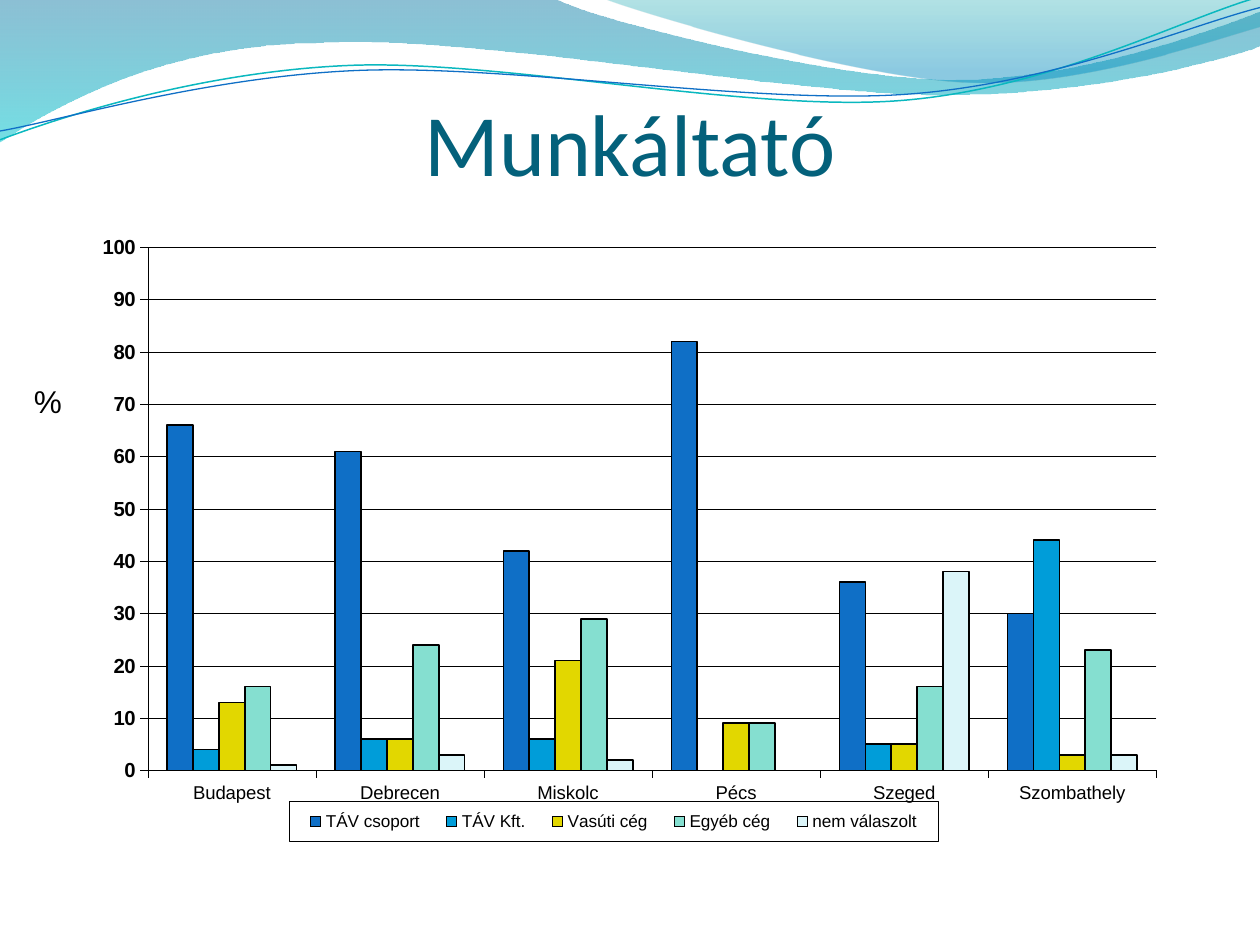
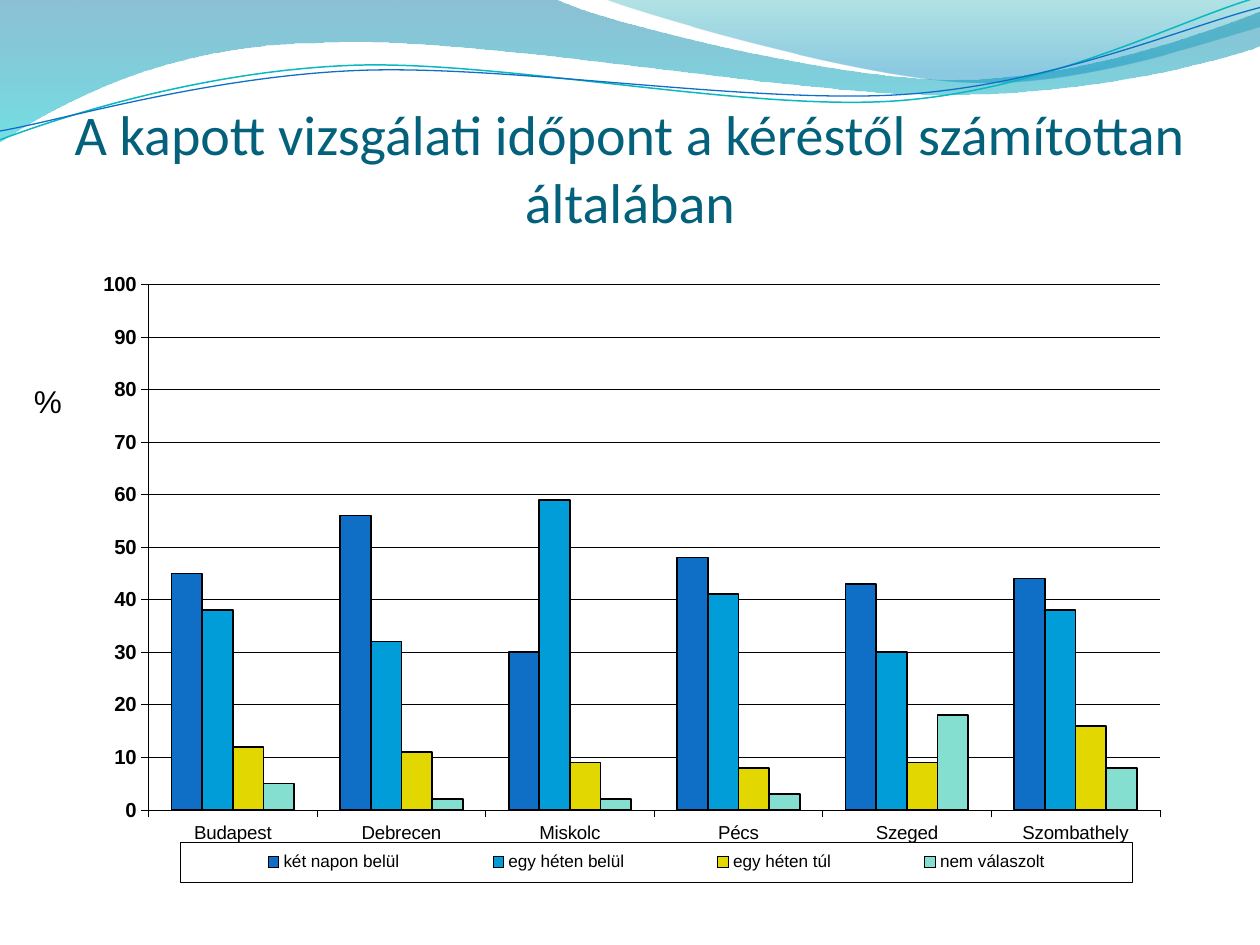
from lxml import etree
from pptx import Presentation
from pptx.chart.data import CategoryChartData
from pptx.dml.color import RGBColor
from pptx.enum.chart import XL_CHART_TYPE as CT, XL_LEGEND_POSITION as LP
from pptx.enum.chart import XL_TICK_LABEL_POSITION as TLP, XL_TICK_MARK as TM
from pptx.enum.text import MSO_ANCHOR, MSO_AUTO_SIZE, PP_ALIGN
from pptx.oxml.ns import qn
from pptx.util import Inches, Pt

CITIES = ["Budapest", "Debrecen", "Miskolc", "Pécs", "Szeged", "Szombathely"]
BAR_COLORS = ["0F6FC6", "009DD9", "E2D700", "85DFD0", "DBF5F9"]
BLACK, TITLE_COLOR = "000000", "04617B"

SLIDES = [
    {
        "title": "Munkáltató", "title_size": 50, "title_height": 0.77,
        "chart_box": (0.71, 1.76, 8.58, 5.1),
        "plot": (0.054, 0.04, 0.933, 0.814),
        "legend": (0.185, 0.902, 0.6, 0.062), "legend_pos": LP.BOTTOM,
        "category_size": 10.6,
        "series": [
            ("TÁV csoport", (66, 61, 42, 82, 36, 30)),
            ("TÁV Kft.", (4, 6, 6, 0, 5, 44)),
            ("Vasúti cég", (13, 6, 21, 9, 5, 3)),
            ("Egyéb cég", (16, 24, 29, 9, 16, 23)),
            ("nem válaszolt", (1, 3, 2, 0, 38, 3)),
        ],
    },
    {
        "title": "A kapott vizsgálati időpont a kéréstől számítottan általában",
        "title_size": 32, "title_height": 1.09,
        "chart_box": (0.68, 2.07, 8.62, 5.05),
        "plot": (0.058, 0.037, 0.931, 0.826),
        "legend": (0.087, 0.914, 0.877, 0.062), "legend_pos": LP.RIGHT,
        "category_size": 10.7,
        "series": [
            ("két napon belül", (45, 56, 30, 48, 43, 44)),
            ("egy héten belül", (38, 32, 59, 41, 30, 38)),
            ("egy héten túl", (12, 11, 9, 8, 9, 16)),
            ("nem válaszolt", (5, 2, 2, 3, 18, 8)),
        ],
    },
]

BANDS = [
    {
        "start": (0, -0.01),
        "steps": [
            [(4.4, -0.01)],
            [(4.76, 0.17), (6.64, 0.63), (7.58, 0.63)],
            [(8.53, 0.63), (9.58, 0.26), (10, 0.09)],
            [(10.01, 0.36)],
            [(9.83, 0.44), (8.7, 0.76), (7.46, 0.75)],
            [(6.22, 0.75), (3.82, 0.28), (2.57, 0.34)],
            [(1.29, 0.35), (0.46, 0.83), (-0.01, 1.13)],
            [(0, -0.01)],
        ],
        "stops": [(0, "0074A1", 45), (1, "00C6CF", 55)],
    },
    {
        "start": (4.79, -0.01),
        "steps": [
            [(5.09, 0.11), (6.82, 0.62), (7.69, 0.65)],
            [(8.56, 0.69), (9.61, 0.32), (10, 0.21)],
            [(10, 0)],
            [(4.79, -0.01)],
        ],
        "stops": [(0, "00A1A9", 30), (0.8, "008BBF", 45)],
    },
]
WAVE_LINES = [
    {
        "start": (0, 1.11),
        "steps": [
            [(0.48, 0.93), (1.58, 0.57), (2.77, 0.52)],
            [(3.95, 0.47), (5.93, 0.89), (7.13, 0.8)],
            [(8.33, 0.71), (9.38, 0.15), (9.98, -0.02)],
        ],
        "line": ("0AB8BF", 0.85),
    },
    {
        "start": (0, 1.04),
        "steps": [
            [(0.47, 0.96), (1.64, 0.61), (2.83, 0.56)],
            [(4.03, 0.51), (5.97, 0.83), (7.17, 0.75)],
            [(8.36, 0.67), (9.41, 0.21), (10, 0.06)],
        ],
        "line": ("0F6FC6", 0.75),
    },
]


def rgb(color):
    return RGBColor.from_string(color)


def set_font(font, size, color=BLACK, name="Arial", bold=False):
    font.size, font.name, font.bold = Pt(size), name, bold
    font.color.rgb = rgb(color)


def set_line(line, color, width):
    line.color.rgb = rgb(color)
    line.width = Pt(width)


def bend_segments(sp, steps):
    segments = iter(list(sp.element.iter(qn("a:lnTo"))))
    for step in steps:
        group = [next(segments) for _ in step]
        if len(group) == 3:
            curve = etree.Element(qn("a:cubicBezTo"))
            group[0].addprevious(curve)
            for segment in group:
                curve.append(segment[0])
                segment.getparent().remove(segment)


def draw_wave(s, wave):
    builder = s.shapes.build_freeform(*map(Inches, wave["start"]))
    points = [(Inches(x), Inches(y)) for step in wave["steps"] for x, y in step]
    builder.add_line_segments(points, close="stops" in wave)
    sp = builder.convert_to_shape()
    bend_segments(sp, wave["steps"])
    sp.shadow.inherit = False
    if "line" in wave:
        sp.fill.background()
        set_line(sp.line, *wave["line"])
        return sp
    sp.line.fill.background()
    sp.fill.gradient()
    sp.fill.gradient_angle = 270
    for stop, (position, color, _) in zip(sp.fill.gradient_stops, wave["stops"]):
        stop.position = position
        stop.color.rgb = rgb(color)
    colors = sp.element.spPr.iter(qn("a:srgbClr"))
    for node, (_, _, alpha) in zip(colors, wave["stops"]):
        etree.SubElement(node, qn("a:alpha"), val=str(alpha * 1000))
    return sp


def add_waves_to_layout(s, layout):
    for i, wave in enumerate(BANDS + WAVE_LINES):
        sp = draw_wave(s, wave)
        sp.element.nvSpPr.cNvPr.set("id", str(100 + i))
        layout.shapes.element.insert(2 + i, sp.element)


def set_layout(parent, index, box, inner=False):
    for old in parent.findall(qn("c:layout")):
        parent.remove(old)
    layout = etree.Element(qn("c:layout"))
    manual = etree.SubElement(layout, qn("c:manualLayout"))
    values = [("layoutTarget", "inner")] if inner else []
    values += [("xMode", "edge"), ("yMode", "edge")] + list(zip("xywh", box))
    for tag, value in values:
        etree.SubElement(manual, qn("c:" + tag), val=str(value))
    parent.insert(index, layout)


def add_title(s, content):
    title = s.shapes.title
    title.left, title.top = Inches(0.5), Inches(0.77)
    title.width, title.height = Inches(9), Inches(content["title_height"])
    tf = title.text_frame
    tf.text = content["title"]
    tf.auto_size = MSO_AUTO_SIZE.NONE
    tf.word_wrap = True
    tf.vertical_anchor = MSO_ANCHOR.BOTTOM
    tf.margin_left = tf.margin_right = tf.margin_bottom = 0
    tf.margin_top = Inches(0.05)
    p = tf.paragraphs[0]
    p.alignment = PP_ALIGN.CENTER
    set_font(p.runs[0].font, content["title_size"], TITLE_COLOR, "Calibri")


def format_axes(chart, category_size):
    category, value = chart.category_axis, chart.value_axis
    for axis, size, bold in ((category, category_size, False), (value, 11.6, True)):
        axis.major_tick_mark, axis.minor_tick_mark = TM.OUTSIDE, TM.NONE
        set_font(axis.tick_labels.font, size, bold=bold)
        set_line(axis.format.line, BLACK, 0.25)
    category.tick_label_position = TLP.LOW
    value.minimum_scale, value.maximum_scale, value.major_unit = 0, 100, 10
    value.has_major_gridlines = True
    set_line(value.major_gridlines.format.line, BLACK, 0.25)


def format_legend(chart, content):
    chart.has_legend = True
    legend = chart.legend
    legend.position = content["legend_pos"]
    legend.include_in_layout = False
    set_font(legend.font, 9.8)
    node = chart.element.find(".//" + qn("c:legend"))
    set_layout(node, 1, content["legend"])
    frame = etree.Element(qn("c:spPr"))
    line = etree.SubElement(frame, qn("a:ln"), w=str(Pt(0.25)))
    fill = etree.SubElement(line, qn("a:solidFill"))
    etree.SubElement(fill, qn("a:srgbClr"), val=BLACK)
    node.find(qn("c:txPr")).addprevious(frame)


def add_bar_chart(s, content):
    data = CategoryChartData()
    data.categories = CITIES
    for name, values in content["series"]:
        data.add_series(name, values)
    box = [Inches(v) for v in content["chart_box"]]
    chart = s.shapes.add_chart(CT.COLUMN_CLUSTERED, *box, data).chart
    chart.has_title = False
    set_font(chart.font, 17.4, bold=True)
    plot = chart.plots[0]
    plot.gap_width, plot.overlap, plot.vary_by_categories = 150, 0, False
    for series, color in zip(plot.series, BAR_COLORS):
        series.invert_if_negative = False
        series.format.fill.solid()
        series.format.fill.fore_color.rgb = rgb(color)
        set_line(series.format.line, BLACK, 0.96)
    format_axes(chart, content["category_size"])
    format_legend(chart, content)
    set_layout(chart.element.find(".//" + qn("c:plotArea")), 0, content["plot"], True)


def add_percent_label(s):
    box = s.shapes.add_textbox(Inches(0.17), Inches(2.98), Inches(0.42), Inches(0.4))
    tf = box.text_frame
    tf.text = "%"
    tf.word_wrap = False
    tf.auto_size = MSO_AUTO_SIZE.SHAPE_TO_FIT_TEXT
    set_font(tf.paragraphs[0].runs[0].font, 18)


def main():
    prs = Presentation()
    prs.slide_width, prs.slide_height = Inches(10), Inches(7.5)
    layout = prs.slide_layouts[5]
    for i, content in enumerate(SLIDES):
        s = prs.slides.add_slide(layout)
        if i == 0:
            add_waves_to_layout(s, layout)
        add_title(s, content)
        add_bar_chart(s, content)
        add_percent_label(s)
    prs.save("out.pptx")


if __name__ == "__main__":
    main()
